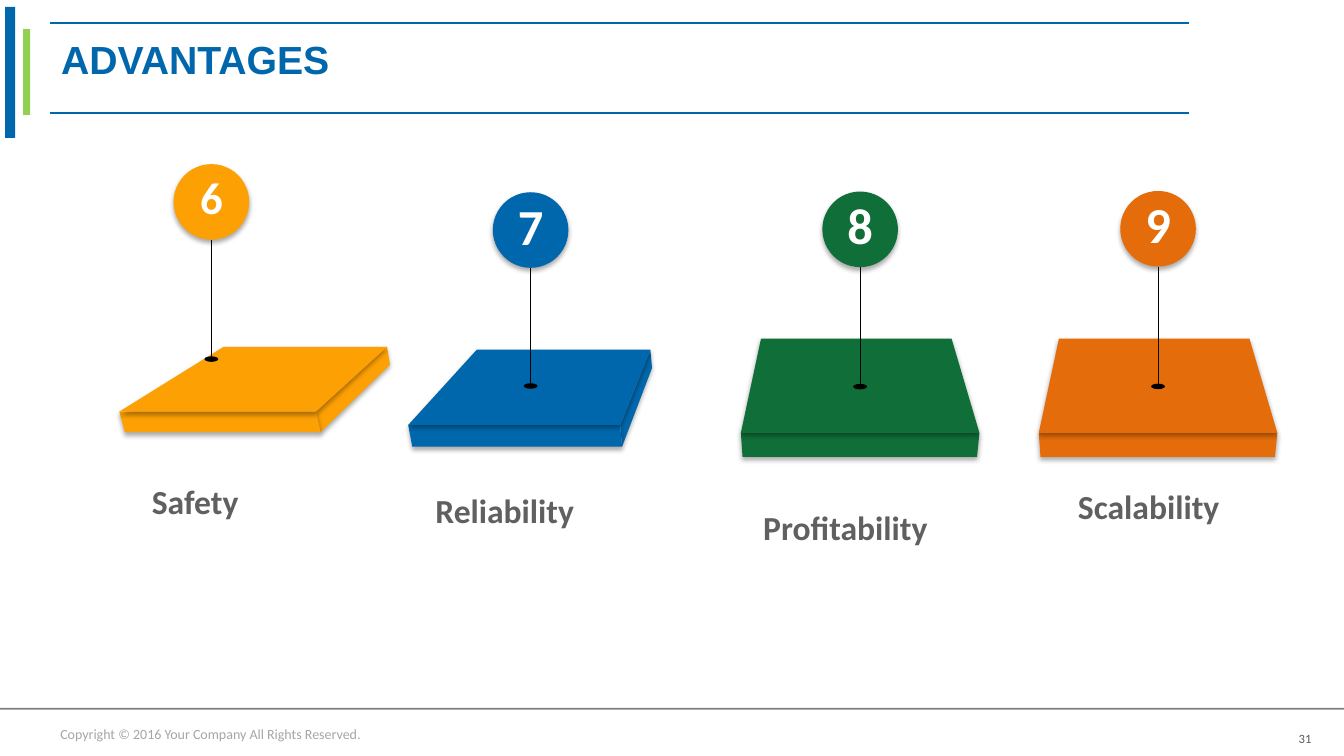
from dataclasses import dataclass
from typing import Any

from lxml import etree
from pptx import Presentation
from pptx.dml.color import RGBColor
from pptx.enum.shapes import MSO_CONNECTOR, MSO_SHAPE
from pptx.enum.text import MSO_ANCHOR, PP_ALIGN
from pptx.oxml.ns import qn
from pptx.util import Pt

RECTANGLE, ELLIPSE = MSO_SHAPE.RECTANGLE, MSO_SHAPE.OVAL
STRAIGHT = MSO_CONNECTOR.STRAIGHT
TOP, MIDDLE = MSO_ANCHOR.TOP, MSO_ANCHOR.MIDDLE
LEFT, CENTER, RIGHT = PP_ALIGN.LEFT, PP_ALIGN.CENTER, PP_ALIGN.RIGHT

COLORS = {
    "blue": "0067AC", "lime": "92D050", "amber": "FDA003", "green": "106E38",
    "orange": "E46C0A", "rule": "808080", "footer": "A6A6A6",
    "number": "595959", "label": "606060", "white": "FFFFFF", "black": "000000",
}


@dataclass
class SlideBuilder:
    slide: Any
    font: str = "Calibri"

    def color(self, name):
        return RGBColor.from_string(COLORS[name])

    def paint(self, shape, color, shadow=False):
        shape.shadow.inherit = False
        shape.fill.solid()
        shape.fill.fore_color.rgb = self.color(color)
        shape.line.fill.background()
        if shadow:
            effects = shape._element.spPr.find(qn("a:effectLst"))
            outer = etree.SubElement(
                effects, qn("a:outerShdw"), blurRad=str(Pt(3.5)), dist=str(Pt(2.2)),
                dir="5400000", algn="t", rotWithShape="0")
            tint = etree.SubElement(outer, qn("a:srgbClr"), val=COLORS["black"])
            etree.SubElement(tint, qn("a:alpha"), val="32000")

    def set_text(self, shape, text, size, color, bold=False, align=LEFT,
                 anchor=MIDDLE, insets=(7.2, 3.6, 7.2, 3.6), font=None):
        frame = shape.text_frame
        frame.word_wrap = True
        frame.vertical_anchor = anchor
        (frame.margin_left, frame.margin_top,
         frame.margin_right, frame.margin_bottom) = map(Pt, insets)
        paragraph = frame.paragraphs[0]
        paragraph.text = text
        paragraph.alignment = align
        paragraph.font.name = font or self.font
        paragraph.font.size = Pt(size)
        paragraph.font.bold = bold
        paragraph.font.color.rgb = self.color(color)
        return paragraph

    def title(self, text, box):
        shape = self.slide.shapes.title
        shape.left, shape.top, shape.width, shape.height = map(Pt, box)
        paragraph = self.set_text(shape, text, 28, "blue", bold=True,
                                  insets=(22, 3.6, 7.2, 3.6), font="Arial")
        paragraph.line_spacing = 0.9

    def text(self, text, box, size, color, **style):
        shape = self.slide.shapes.add_textbox(*map(Pt, box))
        self.set_text(shape, text, size, color, **style)

    def shape(self, kind, box, color, shadow=False):
        shape = self.slide.shapes.add_shape(kind, *map(Pt, box))
        self.paint(shape, color, shadow)
        return shape

    def line(self, start, end, color, width, dot=False):
        connector = self.slide.shapes.add_connector(STRAIGHT, *map(Pt, start + end))
        connector.line.color.rgb = self.color(color)
        connector.line.width = Pt(width)
        properties = connector._element.spPr
        if dot:
            etree.SubElement(properties.find(qn("a:ln")), qn("a:tailEnd"),
                             type="oval", w="lg", len="sm")
        etree.SubElement(properties, qn("a:effectLst"))

    def plate(self, top_face, front_edge, side_corner, color):
        back_right, front_right, front_left, _ = top_face
        low_right, low_left = front_edge
        faces = [(front_right, low_right, low_left, front_left), top_face]
        if side_corner:
            faces.insert(0, (back_right, side_corner, low_right, front_right))
        group = self.slide.shapes.add_group_shape()
        for face in faces:
            corners = [(Pt(x), Pt(y)) for x, y in face]
            outline = group.shapes.build_freeform(*corners[0])
            outline.add_line_segments(corners[1:], close=True)
            self.paint(outline.convert_to_shape(), color, shadow=True)

    def pin(self, number, center, top, tip, size, color):
        diameter = 54
        self.line((center, top + diameter), (center, tip), "black", 0.5, dot=True)
        circle = self.shape(ELLIPSE, (center - diameter / 2, top, diameter, diameter),
                            color, shadow=True)
        self.set_text(circle, number, size, "white", bold=True, align=CENTER,
                      insets=(7.2, 0, 7.2, 7.2))


def shifted(points, offset):
    return [(x + offset, y) for x, y in points]


def main():
    presentation = Presentation()
    presentation.slide_width, presentation.slide_height = Pt(960), Pt(540)
    slide = presentation.slides.add_slide(presentation.slide_layouts[5])
    builder = SlideBuilder(slide)

    builder.shape(RECTANGLE, (0, 505.6, 960, 1.4), "rule")
    builder.shape(RECTANGLE, (16.6, 20.9, 5, 61.2), "lime")
    builder.shape(RECTANGLE, (3.6, 5, 7.2, 93.6), "blue")
    for y in (16.4, 80.6):
        builder.line((36, y), (849.6, y), "blue", 1.5)
    builder.title("ADVANTAGES", (21.6, 16.6, 758.2, 54.7))
    builder.text("Copyright © 2016 Your Company All Rights Reserved.",
                 (36, 514.8, 901.4, 19.4), 10, "footer")
    builder.text("31", (897.1, 516.2, 39.6, 18), 9, "number", align=RIGHT,
                 anchor=TOP, insets=(5.8, 5.8, 0, 0))

    square_top = [(679.7, 241.9), (699.6, 309.2), (529.2, 309.2), (543.6, 241.9)]
    square_front = [(697.9, 326.3), (530.4, 326.3)]
    orange_offset = 212.8
    plates = [
        ([(276.5, 247.7), (225.7, 294), (85.2, 294), (159.8, 247.7)],
         [(229, 308.7), (89.2, 308.7)], (278.6, 260.6), "amber"),
        ([(464.6, 249.8), (443, 303.6), (291.6, 303.6), (340.6, 249.8)],
         [(444.4, 319), (294.5, 319)], (465.8, 262.8), "blue"),
        (square_top, square_front, None, "green"),
        (shifted(square_top, orange_offset), shifted(square_front, orange_offset),
         None, "orange"),
    ]
    for plate in plates:
        builder.plate(*plate)

    pins = [
        ("6", 151, 117.2, 256.5, 32, "amber"),
        ("7", 379, 137.3, 275.7, 36, "blue"),
        ("8", 614.4, 136.8, 276.2, 36, "green"),
        ("9", 827.2, 136.4, 276, 36, "orange"),
    ]
    for pin in pins:
        builder.pin(*pin)

    labels = [
        ("Safety", 108.5, 339.8),
        ("Reliability", 311, 346.3),
        ("Profitability", 545.2, 358.8),
        ("Scalability", 770, 343.6),
    ]
    for text, left, top in labels:
        builder.text(text, (left, top, 150, 37.4), 24, "label", bold=True,
                     anchor=TOP, insets=(0, 3.6, 0, 3.6))

    presentation.save("out.pptx")


if __name__ == "__main__":
    main()
